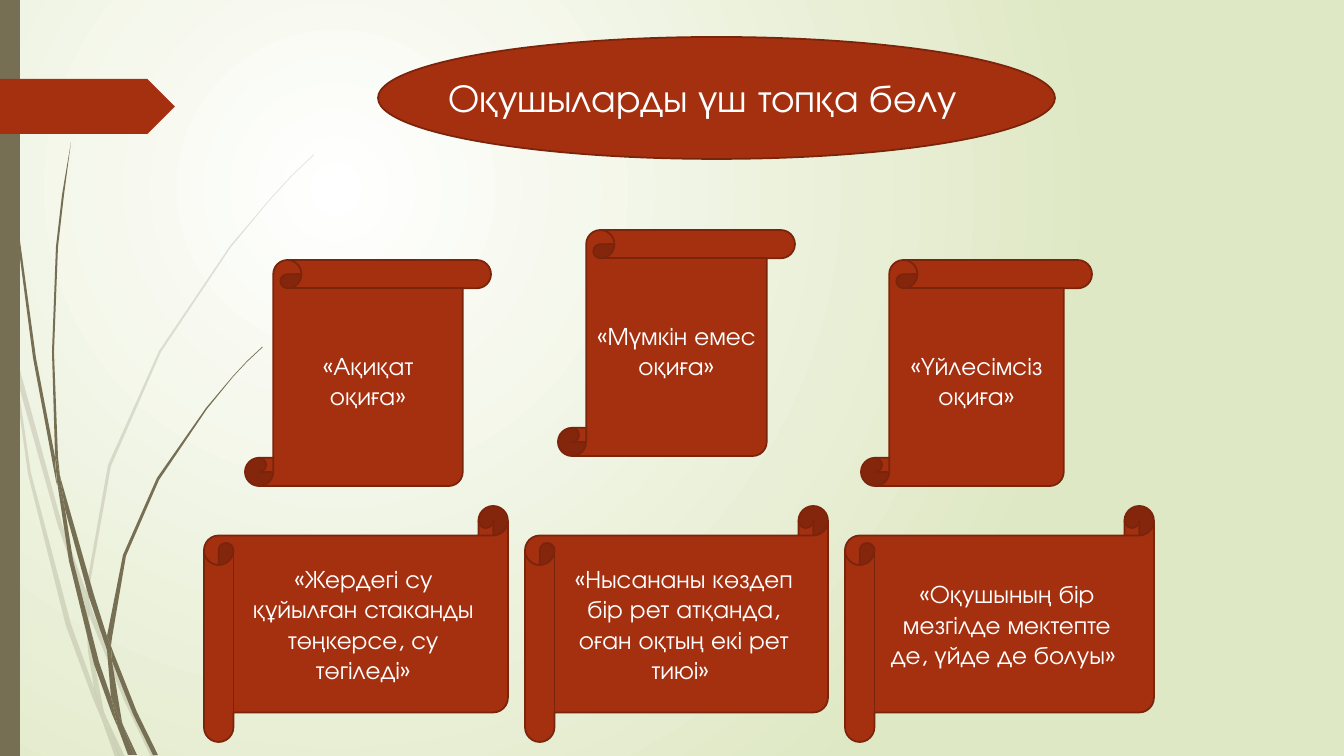
"""Build the slide that splits the pupils into three groups."""
from lxml.etree import SubElement
from pptx import Presentation
from pptx.dml.color import RGBColor
from pptx.enum.shapes import MSO_SHAPE as Shape
from pptx.enum.text import MSO_ANCHOR as Anchor, PP_ALIGN as Align
from pptx.oxml.ns import qn
from pptx.util import Pt

SCALE = 12192000 / 1344
RED, RED_EDGE, OLIVE, WHITE = "A53010", "7A240C", "766F54", "FFFFFF"
FONT = "TeX Gyre Adventor"


def px(length):
    return round(length * SCALE)


def paint(shape, fill, edge=None):
    shape.shadow.inherit = False
    shape.fill.solid()
    shape.fill.fore_color.rgb = RGBColor.from_string(fill)
    if edge:
        shape.line.color.rgb = RGBColor.from_string(edge)
        shape.line.width = Pt(1.25)
    else:
        shape.line.fill.background()


deck = Presentation()
deck.slide_width, deck.slide_height = px(1344), px(756)
slide = deck.slides.add_slide(deck.slide_layouts[6])
shapes = slide.shapes

backdrop = slide.background.fill
backdrop.gradient()
for stop, position, colour in zip(backdrop.gradient_stops, (0, 1), (WHITE, "DFE8C4")):
    stop.position = position
    stop.color.rgb = RGBColor.from_string(colour)
gradient = slide.element.xpath(".//a:gradFill")[0]
gradient.remove(gradient.find(qn("a:lin")))
glow = SubElement(gradient, qn("a:path"), path="circle")
SubElement(glow, qn("a:fillToRect"), l="50000", t="50000", r="100000", b="100000")

pale_grass = [
    [(11, 353), (9, 325), (0, 284), (0, 301), (10, 347)],
    [(58, 526), (85, 604), (86, 591), (62, 524), (14, 348), (17, 379)],
    [(93, 612), (89, 601), (89, 615), (124, 700), (151, 757), (156, 757), (128, 698)],
    [(120, 757), (125, 757), (106, 717)],
    [(94, 688), (71, 624), (31, 473), (17, 379), (11, 353), (28, 474), (66, 626),
     (93, 699), (102, 720), (100, 713)],
    [(85, 604), (88, 651), (94, 688), (97, 698), (106, 717), (104, 712), (92, 651),
     (89, 615), (89, 613)],
    [(89, 589), (111, 466), (161, 352), (231, 247), (270, 200), (292, 176), (314, 155),
     (314, 154), (291, 176), (270, 199), (230, 246), (159, 351), (108, 465), (86, 589),
     (86, 591), (89, 601)],
    [(102, 720), (115, 757), (120, 757)],
    [(89, 613), (89, 615), (89, 601), (86, 591), (85, 604)],
    [(97, 698), (94, 688), (100, 713), (102, 720), (120, 757), (106, 717)],
]
dark_grass = [
    [(7, 111), (17, 235), (33, 358), (56, 481), (57, 485), (55, 461), (55, 457),
     (36, 358), (19, 234), (8, 110), (5, 48), (4, 0), (3, 0), (4, 48)],
    [(89, 597), (107, 650), (107, 638), (107, 636), (94, 595), (60, 476), (65, 509)],
    [(114, 654), (111, 646), (112, 661), (133, 714), (153, 755), (158, 755), (137, 712)],
    [(111, 697), (99, 662), (73, 560), (65, 509), (57, 481), (69, 561), (94, 664),
     (112, 714), (118, 728), (117, 723)],
    [(60, 476), (58, 457), (54, 352), (58, 247), (64, 195), (71, 142), (62, 195),
     (56, 247), (52, 352), (55, 453)],
    [(134, 755), (137, 755), (123, 725)],
    [(57, 481), (65, 509), (60, 476), (55, 453), (55, 457)],
    [(112, 638), (126, 556), (159, 480), (207, 409), (233, 377), (247, 362), (263, 347),
     (262, 347), (247, 361), (233, 376), (206, 408), (157, 478), (123, 555), (107, 636),
     (111, 646)],
    [(118, 728), (128, 755), (132, 755)],
    [(107, 650), (111, 697), (117, 712), (123, 725), (122, 722), (112, 661), (110, 656)],
    [(107, 650), (110, 656), (112, 661), (111, 646), (107, 636), (107, 638)],
    [(117, 712), (111, 697), (117, 723), (118, 728), (131, 755), (134, 755), (123, 725)],
]
for grass, opacity in ((pale_grass, 20), (dark_grass, 100)):
    for corners in grass:
        outline = shapes.build_freeform(*corners[0], scale=SCALE)
        outline.add_line_segments(corners[1:], close=True)
        blade = outline.convert_to_shape()
        paint(blade, OLIVE)
        if opacity < 100:
            tint = blade.element.xpath("./p:spPr/a:solidFill/a:srgbClr")[0]
            SubElement(tint, qn("a:alpha"), val=str(opacity * 1000))

side_bar = shapes.add_shape(Shape.RECTANGLE, 0, 0, px(20), px(756))
paint(side_bar, OLIVE)
page_arrow = shapes.add_shape(Shape.PENTAGON, 0, px(79), px(175), px(55))
paint(page_arrow, RED)
title_oval = shapes.add_shape(Shape.OVAL, px(378), px(37), px(677), px(122))
paint(title_oval, RED, RED_EDGE)

title = shapes.add_textbox(px(211), px(68), px(983), px(141))
title.text_frame.text = "Оқушыларды үш топқа бөлу"
labels = [(title, 28, Anchor.TOP)]

scrolls = [
    (Shape.VERTICAL_SCROLL, 226, [
        (245, 260, 246, "«Ақиқат оқиға»"),
        (558, 230, 237, "«Мүмкін емес оқиға»"),
        (861, 260, 231, "«Үйлесімсіз оқиға»")]),
    (Shape.HORIZONTAL_SCROLL, 236, [
        (204, 506, 304, "«Жердегі су құйылған стаканды төңкерсе, су төгіледі»"),
        (525, 506, 303, "«Нысананы көздеп бір рет атқанда, оған оқтың екі рет тиюі» "),
        (845, 506, 309, "«Оқушының бір мезгілде мектепте де, үйде де болуы» ")]),
]
for outline, height, events in scrolls:
    for left, top, width, wording in events:
        scroll = shapes.add_shape(outline, px(left), px(top), px(width), px(height))
        paint(scroll, RED, RED_EDGE)
        scroll.text_frame.text = wording
        labels.append((scroll, 18, Anchor.MIDDLE))

for label, size, anchor in labels:
    frame = label.text_frame
    frame.word_wrap = True
    frame.vertical_anchor = anchor
    paragraph = frame.paragraphs[0]
    paragraph.alignment = Align.CENTER
    paragraph.font.name = FONT
    paragraph.font.size = Pt(size)
    paragraph.font.color.rgb = RGBColor.from_string(WHITE)

deck.save("out.pptx")
